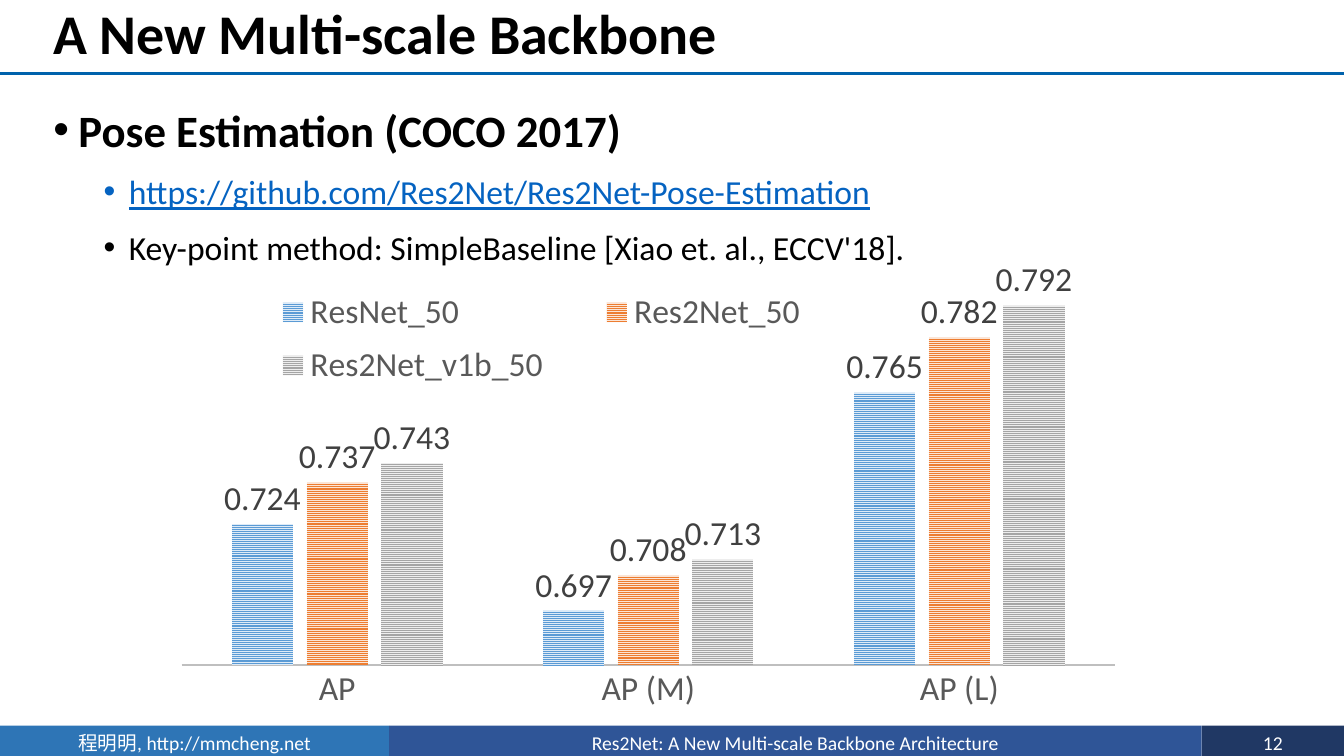
from lxml.etree import SubElement
from pptx import Presentation
from pptx.chart.data import CategoryChartData
from pptx.dml.color import RGBColor
from pptx.enum.chart import XL_CHART_TYPE, XL_LABEL_POSITION, XL_LEGEND_POSITION, XL_TICK_MARK
from pptx.enum.dml import MSO_PATTERN
from pptx.enum.shapes import MSO_CONNECTOR, MSO_SHAPE
from pptx.enum.text import MSO_ANCHOR, MSO_AUTO_SIZE, PP_ALIGN
from pptx.oxml import parse_xml
from pptx.oxml.ns import nsdecls, qn
from pptx.util import Inches, Pt

THEME = {
    "font": "Calibri",
    "black": "000000", "white": "FFFFFF", "link": "0563C1", "rule": "0062AC",
    "axis": "BFBFBF", "axis_text": "595959", "label": "404040",
    "title": 40, "heading": 32, "body": 24, "footer": 14,
}
WIDTH, HEIGHT = 13.33, 7.5
MARGIN = 0.43
RULE_TOP = 0.73
FOOTER_TOP, FOOTER_HEIGHT = 7.2, 0.34


def style(font, size, color, bold=False):
    font.name = THEME["font"]
    font.size = Pt(THEME[size])
    font.bold = bold
    font.color.rgb = RGBColor.from_string(THEME[color])


def place(element, **shares):
    """Lay out a chart part by shares of the chart's size."""
    layout = element.find(qn("c:layout"))
    if layout is None:
        layout = parse_xml(f"<c:layout {nsdecls('c')}/>")
        anchor = element.find(qn("c:legendPos"))
        if anchor is None:
            element.insert(0, layout)
        else:
            anchor.addnext(layout)
    manual = SubElement(layout, qn("c:manualLayout"))
    for name, value in shares.items():
        SubElement(manual, qn(f"c:{name}")).set("val", str(value))


deck = Presentation()
deck.slide_width, deck.slide_height = Inches(WIDTH), Inches(HEIGHT)
page = deck.slides.add_slide(deck.slide_layouts[5])

# Footer bar
footer_cells = [
    ("程明明, http://mmcheng.net", 3.86, "2E75B6"),
    ("Res2Net: A New Multi-scale Backbone Architecture", 8.06, "2F5597"),
    ("12", 1.41, "203864"),
]
left = 0
for text, width, color in footer_cells:
    cell = page.shapes.add_shape(MSO_SHAPE.RECTANGLE, Inches(left), Inches(FOOTER_TOP),
                                 Inches(width), Inches(FOOTER_HEIGHT))
    cell.shadow.inherit = False
    cell.fill.solid()
    cell.fill.fore_color.rgb = RGBColor.from_string(color)
    cell.line.fill.background()
    cell.text_frame.text = text
    cell.text_frame.vertical_anchor = MSO_ANCHOR.MIDDLE
    paragraph = cell.text_frame.paragraphs[0]
    paragraph.alignment = PP_ALIGN.CENTER
    style(paragraph.runs[0].font, "footer", "white")
    left += width

# Title and the rule below it
title = page.shapes.title
title.left, title.top = Inches(MARGIN), 0
title.width, title.height = Inches(WIDTH - MARGIN), Inches(RULE_TOP)
title.text_frame.text = "A New Multi-scale Backbone"
title.text_frame.auto_size = MSO_AUTO_SIZE.NONE
title.text_frame.vertical_anchor = MSO_ANCHOR.MIDDLE
paragraph = title.text_frame.paragraphs[0]
paragraph.alignment = PP_ALIGN.LEFT
paragraph.line_spacing = 0.9
style(paragraph.runs[0].font, "title", "black", bold=True)

rule = page.shapes.add_connector(MSO_CONNECTOR.STRAIGHT, 0, Inches(RULE_TOP),
                                 Inches(WIDTH), Inches(RULE_TOP))
rule.line.color.rgb = RGBColor.from_string(THEME["rule"])
rule.line.width = Pt(2)
SubElement(rule._element.spPr, qn("a:effectLst"))

# Bulleted text
bullets = [
    ("Pose Estimation (COCO 2017)", 0, "heading", "black"),
    ("https://github.com/Res2Net/Res2Net-Pose-Estimation", 1, "body", "link"),
    ("Key-point method: SimpleBaseline [Xiao et. al., ECCV'18].", 1, "body", "black"),
]
box = page.shapes.add_textbox(Inches(MARGIN), Inches(0.86), Inches(12.42), Inches(1.9))
box.text_frame.word_wrap = True
box.text_frame.text = "\n".join(text for text, *_ in bullets)
for paragraph, (_, level, size, color) in zip(box.text_frame.paragraphs, bullets):
    paragraph.level = level
    properties = paragraph._p.get_or_add_pPr()
    properties.set("marL", str(Inches(0.25 + 0.5 * level)))
    properties.set("indent", str(Inches(-0.25)))
    SubElement(properties, qn("a:buFont")).set("typeface", "Arial")
    SubElement(properties, qn("a:buChar")).set("char", "•")
    paragraph.line_spacing = 1.2
    paragraph.space_before = Pt(5 * level)
    span = paragraph.runs[0]
    style(span.font, size, color, bold=level == 0)
    span.font.underline = color == "link"

# Column chart
series_data = [
    ("ResNet_50", (0.724, 0.697, 0.765), "5B9BD5", "DEEBF7"),
    ("Res2Net_50", (0.737, 0.708, 0.782), "ED7D31", "FBE5D6"),
    ("Res2Net_v1b_50", (0.743, 0.713, 0.792), "A5A5A5", "EDEDED"),
]
data = CategoryChartData(number_format="0.000")
data.categories = ["AP", "AP (M)", "AP (L)"]
for name, values, *_ in series_data:
    data.add_series(name, values)
chart = page.shapes.add_chart(XL_CHART_TYPE.COLUMN_CLUSTERED, Inches(1.61), Inches(2.06),
                              Inches(9.64), Inches(5.1), data).chart
style(chart.font, "body", "black")
chart.has_title = False

plot = chart.plots[0]
plot.gap_width, plot.overlap = 164, -22
plot.vary_by_categories = False
for series, (_, _, ink, paper) in zip(plot.series, series_data):
    fill = series.format.fill
    fill.patterned()
    fill.pattern = MSO_PATTERN.NARROW_HORIZONTAL
    fill.fore_color.rgb = RGBColor.from_string(ink)
    fill.back_color.rgb = RGBColor.from_string(paper)
    series.format.line.fill.background()
    labels = series.data_labels
    labels.show_value = True
    labels.position = XL_LABEL_POSITION.OUTSIDE_END
    style(labels.font, "body", "label")

value_axis = chart.value_axis
value_axis.minimum_scale, value_axis.maximum_scale = 0.68, 0.8
value_axis.has_major_gridlines = False
value_axis.visible = False

category_axis = chart.category_axis
category_axis.major_tick_mark = XL_TICK_MARK.NONE
category_axis.format.line.color.rgb = RGBColor.from_string(THEME["axis"])
category_axis.format.line.width = Pt(1.5)
style(category_axis.tick_labels.font, "body", "axis_text")

chart.has_legend = True
chart.legend.position = XL_LEGEND_POSITION.TOP
chart.legend.include_in_layout = True
style(chart.legend.font, "body", "axis_text")
place(chart.legend._element, xMode="edge", yMode="edge", x=0.07, y=0.14, w=0.64, h=0.23)
plot_area = chart._chartSpace.chart.plotArea
place(plot_area, layoutTarget="inner", xMode="edge", yMode="edge", x=0.02, y=0.14, w=0.96, h=0.75)

deck.save("out.pptx")
